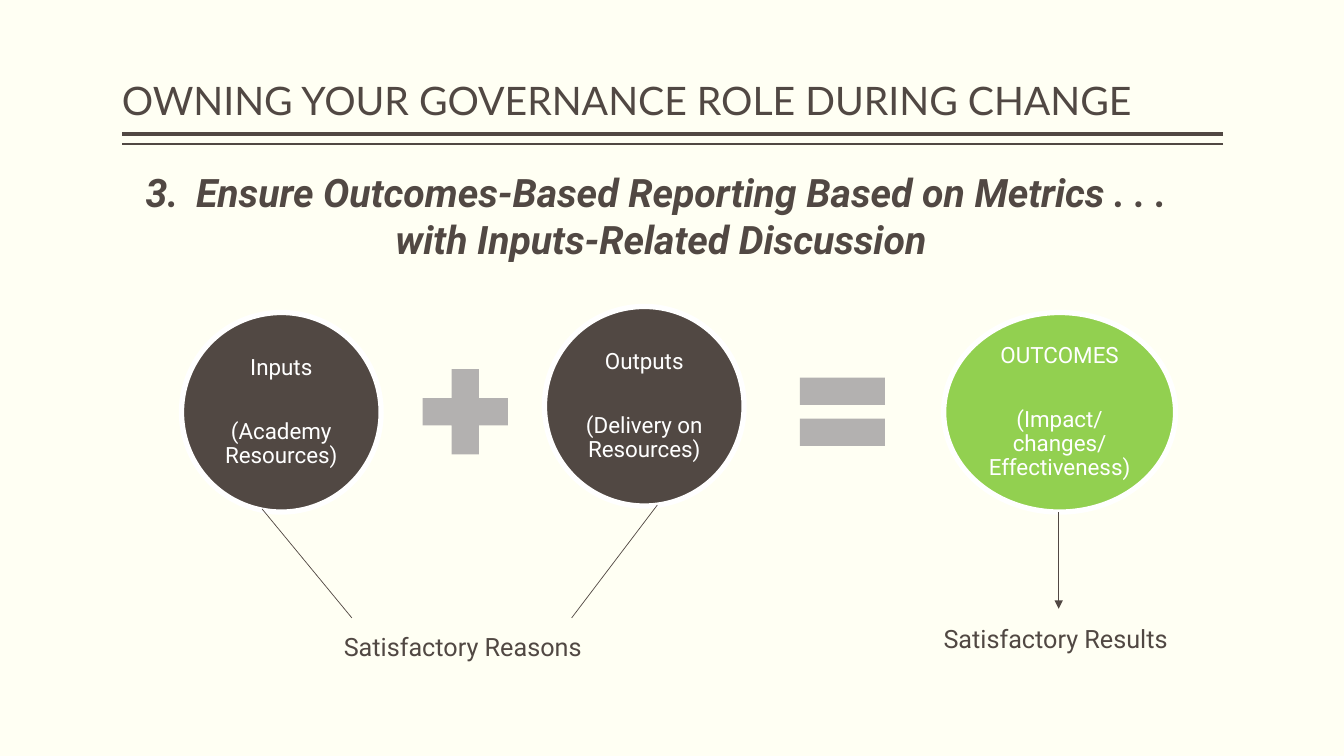
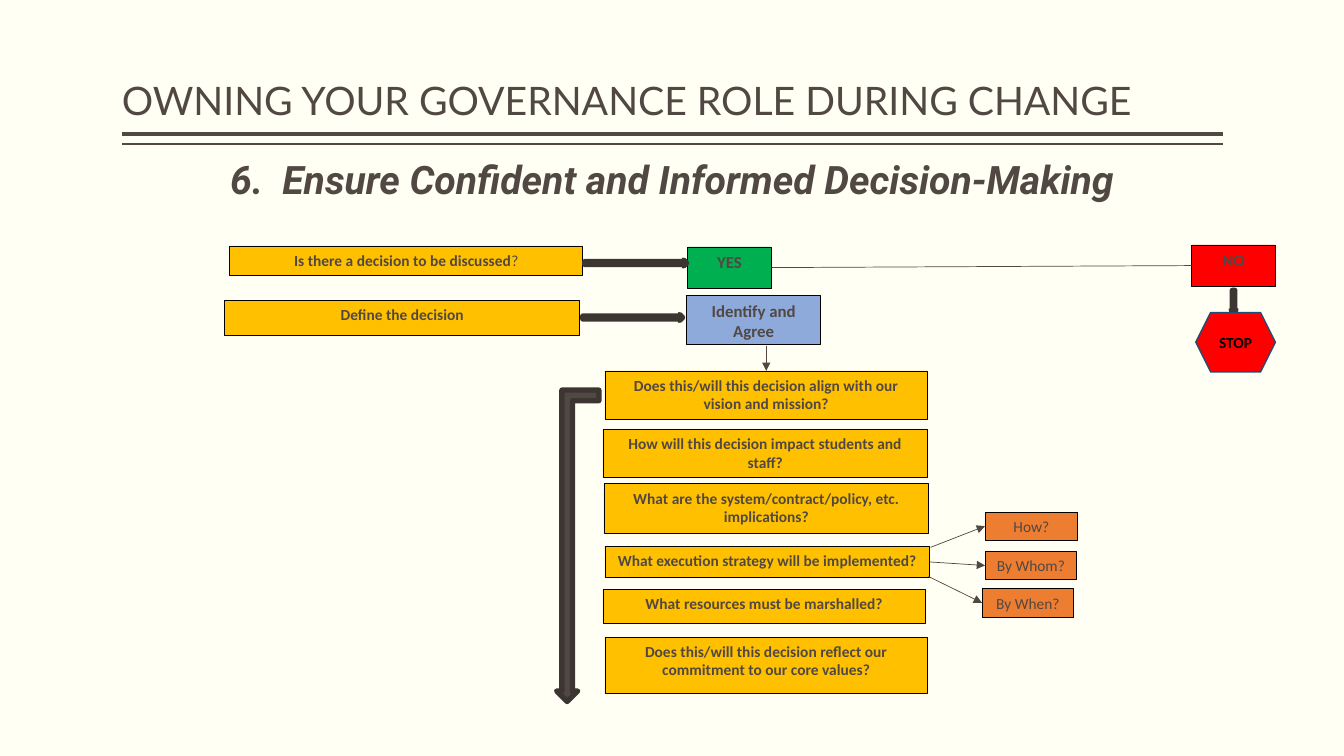
from dataclasses import dataclass

from pptx import Presentation
from pptx.dml.color import RGBColor
from pptx.enum.shapes import MSO_CONNECTOR, MSO_SHAPE as SHAPE
from pptx.enum.text import MSO_ANCHOR as ANCHOR, MSO_AUTO_SIZE, PP_ALIGN as ALIGN
from pptx.oxml.ns import qn
from pptx.oxml.xmlchemy import OxmlElement
from pptx.util import Inches, Pt


@dataclass(frozen=True)
class Theme:
    paper: str = "FFFFF3"
    ink: str = "514843"
    ink_edge: str = "3C3532"
    white: str = "FFFFFF"
    black: str = "000000"
    operator: str = "B3B1B0"
    outcome: str = "92D050"
    question: str = "FFC000"
    yes: str = "00B050"
    no: str = "FF0000"
    agree: str = "8EAADB"
    detail: str = "ED7D31"
    stop_edge: str = "1F4D78"
    title_font: str = "Lato"
    text_font: str = "Roboto"
    chart_font: str = "Calibri"
    heading_size: int = 28
    caption_size: int = 18
    circle_size: int = 16
    answer_size: int = 12
    question_size: int = 11
    hairline: float = 0.5
    heavy: float = 3.78


T = Theme()


def write(frame, text, font=T.text_font, size=T.heading_size, color=T.ink, bold=False,
          italic=False, align=ALIGN.CENTER, anchor=ANCHOR.TOP, spacing=1.0, gap=0,
          margins=(0.1, 0.05), plain_tail=""):
    """Fill a frame, one paragraph per line; plain_tail ends the text without bold."""
    frame.word_wrap = True
    frame.auto_size = MSO_AUTO_SIZE.NONE
    frame.vertical_anchor = anchor
    frame.margin_left = frame.margin_right = Inches(margins[0])
    frame.margin_top = frame.margin_bottom = Inches(margins[1])
    lines = text.split("\n")
    for number, line in enumerate(lines):
        paragraph = frame.add_paragraph() if number else frame.paragraphs[0]
        paragraph.alignment = align
        paragraph.line_spacing = spacing
        paragraph.space_before = Pt(0)
        paragraph.space_after = Pt(gap if number < len(lines) - 1 else 0)
        pieces = [(line, bold)]
        if plain_tail and number == len(lines) - 1:
            pieces.append((plain_tail, False))
        for piece, weight in pieces:
            run = paragraph.add_run()
            run.text = piece
            run.font.name = font
            run.font.size = Pt(size)
            run.font.bold = weight
            run.font.italic = italic
            run.font.color.rgb = RGBColor.from_string(color)


def add_block(slide, kind, place, fill, edge=None, edge_width=T.hairline):
    block = slide.shapes.add_shape(kind, *map(Inches, place))
    block.shadow.inherit = False
    block.fill.solid()
    block.fill.fore_color.rgb = RGBColor.from_string(fill)
    if edge:
        block.line.color.rgb = RGBColor.from_string(edge)
        block.line.width = Pt(edge_width)
    else:
        block.line.fill.background()
    return block


# Shared look
deck = Presentation()
deck.slide_width, deck.slide_height = Inches(13.33), Inches(7.5)
master = deck.slide_master
master.background.fill.solid()
master.background.fill.fore_color.rgb = RGBColor.from_string(T.paper)
reporting = deck.slides.add_slide(deck.slide_layouts[1])
decision = deck.slides.add_slide(deck.slide_layouts[5])

for slide in (reporting, decision):
    title = slide.shapes.title
    title.left, title.top, title.width, title.height = map(Inches, (1.21, 0.08, 10.92, 1.2))
    write(title.text_frame, "OWNING YOUR GOVERNANCE ROLE DURING CHANGE", font=T.title_font,
          align=ALIGN.LEFT, anchor=ANCHOR.BOTTOM, spacing=0.9, margins=(0, 0.05))

# Outcomes-based reporting
heading = reporting.placeholders[1]
heading.left, heading.top, heading.width, heading.height = map(Inches, (0.77, 1.62, 11.57, 0.74))
write(heading.text_frame,
      "Ensure Outcomes-Based Reporting Based on Metrics . . . \nwith Inputs-Related Discussion",
      bold=True, italic=True, margins=(0, 0.05))
numbered, unnumbered = (p._p.get_or_add_pPr() for p in heading.text_frame.paragraphs)
for properties, indent in ((numbered, 0.5), (unnumbered, 0)):
    properties.set("marL", str(Inches(indent)))
    properties.set("indent", str(-Inches(indent)))
numbering = OxmlElement("a:buAutoNum")
numbering.set("type", "arabicPeriod")
numbering.set("startAt", "3")
numbered.append(numbering)
unnumbered.append(OxmlElement("a:buNone"))

for place, fill, text in (
    ((1.8, 3.1, 1.98, 1.98), T.ink, "Inputs\n(Academy Resources)"),
    ((5.4, 3.04, 1.98, 1.98), T.ink, "Outputs\n(Delivery on Resources)"),
    ((9.36, 3.1, 2.3, 1.98), T.outcome, "OUTCOMES\n(Impact/changes/Effectiveness)"),
):
    circle = add_block(reporting, SHAPE.OVAL, place, fill, T.white, T.heavy)
    write(circle.text_frame, text, size=T.circle_size, color=T.white, anchor=ANCHOR.MIDDLE,
          spacing=0.9, gap=28.5, margins=(0.02, 0.02))

for kind, left in ((SHAPE.MATH_PLUS, 4.04), (SHAPE.MATH_EQUAL, 7.78)):
    add_block(reporting, kind, (left, 3.51, 1.15, 1.15), T.operator)

for slide, place, text, style in (
    (reporting, (2.9, 6.21, 3.38, 0.4), "Satisfactory Reasons", {"size": T.caption_size}),
    (reporting, (8.78, 6.13, 3.38, 0.4), "Satisfactory Results", {"size": T.caption_size}),
    (decision, (1.55, 1.49, 10.23, 0.57), "6.  Ensure Confident and Informed Decision-Making",
     {"bold": True, "italic": True}),
):
    caption = slide.shapes.add_textbox(*map(Inches, place))
    write(caption.text_frame, text, **style)

# Decision flow
question = {"size": T.question_size, "bold": True}
answer = {"size": T.answer_size, "bold": True}
detail = {"size": T.question_size}
steps = {}
for place, fill, text, style in (
    ((2.28, 2.44, 3.5, 0.29), T.question, "Is there a decision to be discussed",
     question | {"plain_tail": "?"}),
    ((2.23, 2.98, 3.52, 0.35), T.question, "Define the decision", question),
    ((6.82, 2.45, 0.83, 0.41), T.yes, "YES", answer),
    ((11.82, 2.43, 0.83, 0.41), T.no, "NO", answer),
    ((6.81, 2.93, 1.33, 0.49), T.agree, "Identify and Agree", answer),
    ((6, 3.68, 3.2, 0.48), T.question,
     "Does this/will this decision align with our vision and mission?", question),
    ((5.98, 4.26, 3.22, 0.48), T.question,
     "How will this decision impact students and staff?", question),
    ((5.99, 4.8, 3.22, 0.49), T.question,
     "What are the system/contract/policy, etc. implications?", question),
    ((6, 5.42, 3.22, 0.31), T.question, "What execution strategy will be implemented?", question),
    ((5.98, 5.85, 3.2, 0.33), T.question, "What resources must be marshalled?", question),
    ((6, 6.32, 3.2, 0.56), T.question,
     "Does this/will this decision reflect our commitment to our core values?", question),
    ((9.77, 5.08, 0.92, 0.28), T.detail, "How?", detail),
    ((9.77, 5.47, 0.91, 0.28), T.detail, "By Whom?", detail),
    ((9.74, 5.84, 0.91, 0.28), T.detail, "By When?", detail),
):
    steps[text] = add_block(decision, SHAPE.RECTANGLE, place, fill, T.black)
    write(steps[text].text_frame, text, font=T.chart_font, **style)

for kind, place, rotation in (
    (SHAPE.RIGHT_ARROW, (5.8, 2.58, 1.01, 0.06), 0),
    (SHAPE.RIGHT_ARROW, (5.78, 3.12, 0.99, 0.06), 0),
    (SHAPE.DOWN_ARROW, (12.21, 2.88, 0.05, 0.22), 0),
    (SHAPE.BENT_UP_ARROW, (5.52, 3.87, 0.42, 3.09), 180),
):
    flow_arrow = add_block(decision, kind, place, T.ink, T.ink_edge, T.heavy)
    flow_arrow.rotation = rotation

stop = add_block(decision, SHAPE.HEXAGON, (11.86, 3.1, 0.79, 0.59), T.no, T.stop_edge, 1)
write(stop.text_frame, "STOP", font=T.chart_font, size=T.question_size, color=T.black,
      bold=True, anchor=ANCHOR.MIDDLE)

# Rules under the title (kept on the master) and thin links
strategy = steps["What execution strategy will be implemented?"]
vision = steps["Does this/will this decision align with our vision and mission?"]
for host, ends, width, has_head, source, target in (
    (master, (12.13, 1.33, 1.21, 1.33), 3, False, None, None),
    (master, (12.13, 1.43, 1.21, 1.43), 1, False, None, None),
    (reporting, (2.6, 5.05, 3.49, 6.13), T.hairline, False, None, None),
    (reporting, (6.52, 5.01, 5.67, 6.13), T.hairline, False, None, None),
    (reporting, (10.5, 5.08, 10.5, 6.04), T.hairline, True, None, None),
    (decision, (7.65, 2.63, 11.82, 2.62), T.hairline, False, (steps["YES"], 3), (steps["NO"], 1)),
    (decision, (7.6, 3.43, 7.6, 3.68), T.hairline, True, None, (vision, 0)),
    (decision, (9.23, 5.43, 9.78, 5.19), T.hairline, True, None, (steps["How?"], 1)),
    (decision, (9.22, 5.58, 9.74, 5.58), T.hairline, True, (strategy, 3), (steps["By Whom?"], 1)),
    (decision, (9.21, 5.72, 9.72, 6.02), T.hairline, True, None, (steps["By When?"], 1)),
):
    canvas = reporting if host is master else host
    link = canvas.shapes.add_connector(MSO_CONNECTOR.STRAIGHT, *map(Inches, ends))
    link.line.color.rgb = RGBColor.from_string(T.ink)
    link.line.width = Pt(width)
    if source:
        link.begin_connect(*source)
    if target:
        link.end_connect(*target)
    properties = link.element.spPr
    if has_head:
        head = OxmlElement("a:tailEnd")
        head.set("type", "triangle")
        properties.find(qn("a:ln")).append(head)
    properties.append(OxmlElement("a:effectLst"))
    if host is master:
        link.element.nvCxnSpPr.cNvPr.id = 100 + len(master.shapes)
        master.shapes.element.append(link.element)

deck.save("out.pptx")
